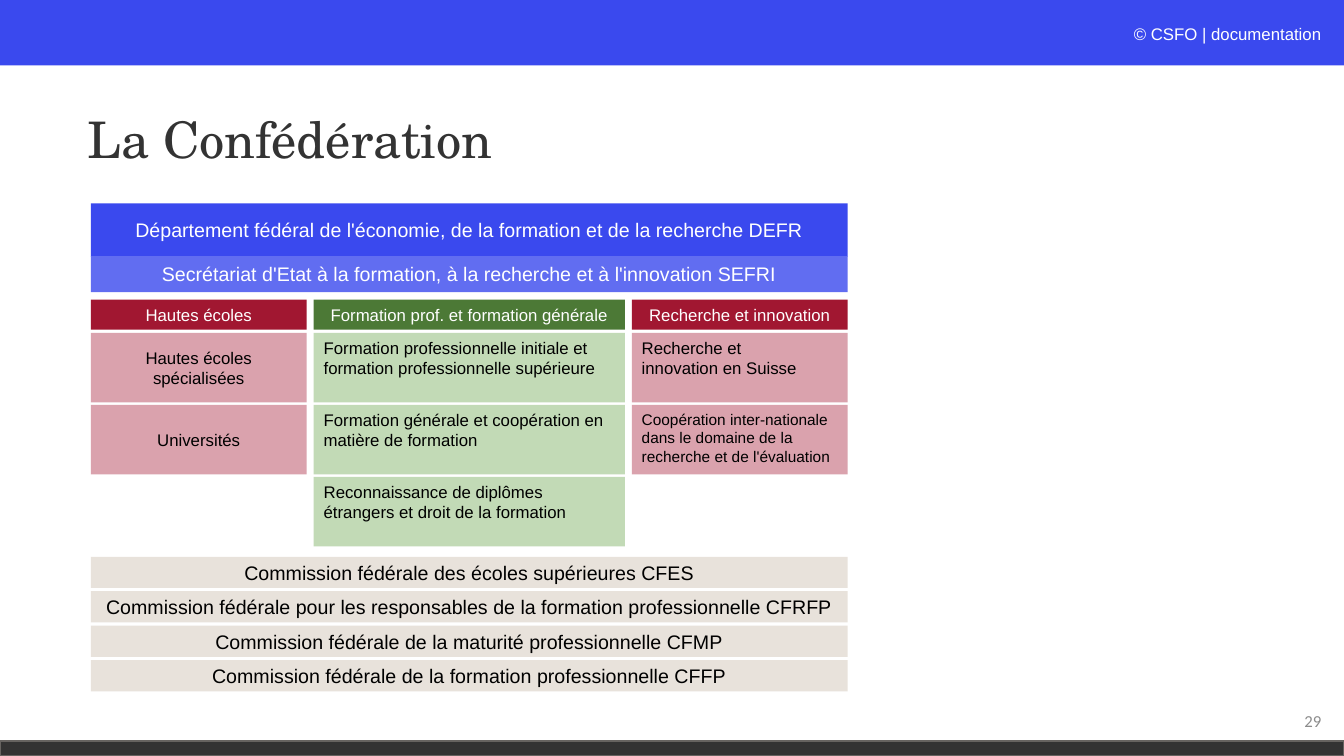
import pptx
import pptx.util
import pptx.dml.color
import pptx.enum.shapes
import pptx.enum.text
from dataclasses import dataclass

Pt = pptx.util.Pt
RGB = pptx.dml.color.RGBColor.from_string
ALIGN = pptx.enum.text.PP_ALIGN
ANCHOR = pptx.enum.text.MSO_ANCHOR
RECT = pptx.enum.shapes.MSO_SHAPE.RECTANGLE


@dataclass(frozen=True)
class Theme:
    blue: str = "3A49EE"
    light_blue: str = "616DF1"
    red: str = "A11731"
    pink: str = "DAA2AD"
    green: str = "4C7936"
    light_green: str = "C2DAB6"
    beige: str = "E8E2DB"
    dark: str = "333333"
    edge: str = "666360"
    grey: str = "8C8C8C"
    white: str = "FFFFFF"
    black: str = "000000"
    body: str = "Arial"
    heading: str = "TeX Gyre Schola"
    number: str = "Calibri"
    title_size: float = 36
    band_size: float = 14
    cell_size: float = 12
    small_size: float = 11


T = Theme()


def write(sp, text, size=T.cell_size, color=T.black, font=T.body,
          align=ALIGN.CENTER, anchor=ANCHOR.MIDDLE, spacing=None):
    """Fill a shape with text, one paragraph per line."""
    tf = sp.text_frame
    tf.word_wrap = True
    tf.vertical_anchor = anchor
    tf.text = text
    for p in tf.paragraphs:
        p.alignment = align
        p.line_spacing = spacing
        p.font.size = Pt(size)
        p.font.name = font
        p.font.color.rgb = RGB(color)


def add_box(s, x, y, w, h, fill, line=None):
    sp = s.shapes.add_shape(RECT, Pt(x), Pt(y), Pt(w), Pt(h))
    sp.shadow.inherit = False
    sp.fill.solid()
    sp.fill.fore_color.rgb = RGB(fill)
    if line:
        sp.line.color.rgb = RGB(line)
        sp.line.width = Pt(1)
    else:
        sp.line.fill.background()
    return sp


def add_label(s, x, y, w, h, text, **fmt):
    write(s.shapes.add_textbox(Pt(x), Pt(y), Pt(w), Pt(h)), text, **fmt)


def add_frame(s, w, h):
    """Top band with copyright, bottom strip and page number."""
    add_box(s, 0, 0, w, 46.8, T.blue)
    add_box(s, 0, h - 10.8, w, 10.8, T.dark, line=T.edge)
    add_label(s, w - 339, 13.7, 330, 21.6, "© CSFO | documentation",
              color=T.white, align=ALIGN.RIGHT, anchor=ANCHOR.TOP)
    add_label(s, w - 225, h - 39.6, 216, 28.8, "29",
              color=T.grey, font=T.number, align=ALIGN.RIGHT)


def add_departments(s, x, y, w):
    write(add_box(s, x, y, w, 38, T.blue),
          "Département fédéral de l'économie, de la formation et de la recherche DEFR",
          size=T.band_size, color=T.white)
    write(add_box(s, x, y + 37.6, w, 25.7, T.light_blue),
          "Secrétariat d'Etat à la formation, à la recherche et à l'innovation SEFRI",
          size=T.band_size, color=T.white)


def add_column(s, x, y, w, header, tasks, head_fill, fill, **fmt):
    """Header over a stack of tasks, each a (text, size) pair."""
    write(add_box(s, x, y, w, 21.6, head_fill), header, color=T.white)
    for i, (text, size) in enumerate(tasks):
        sp = add_box(s, x, y + 23.7 + i * 51.45, w, 49.7, fill)
        write(sp, text, size=size, **fmt)


def add_domains(s, x, y, w):
    side, gap = 154.2, 5
    top_left = dict(align=ALIGN.LEFT, anchor=ANCHOR.TOP)
    add_column(s, x, y, side, "Hautes écoles",
               [("Hautes écoles\nspécialisées", T.cell_size),
                ("Universités", T.cell_size)], T.red, T.pink)
    add_column(s, x + side + gap, y, w - 2 * (side + gap),
               "Formation prof. et formation générale",
               [("Formation professionnelle initiale et\n"
                 "formation professionnelle supérieure", T.cell_size),
                ("Formation générale et coopération en matière de formation",
                 T.cell_size),
                ("Reconnaissance de diplômes étrangers et droit de la formation",
                 T.cell_size)],
               T.green, T.light_green, **top_left)
    add_column(s, x + w - side, y, side, "Recherche et innovation",
               [("Recherche et\ninnovation en Suisse", T.cell_size),
                ("Coopération inter-nationale dans le domaine de la recherche "
                 "et de l'évaluation", T.small_size)],
               T.red, T.pink, **top_left)


def add_commissions(s, x, y, w):
    names = ["des écoles supérieures CFES",
             "pour les responsables de la formation professionnelle CFRFP",
             "de la maturité professionnelle CFMP",
             "de la formation professionnelle CFFP"]
    for i, name in enumerate(names):
        sp = add_box(s, x, y + i * 24.6, w, 22.3, T.beige)
        write(sp, f"Commission fédérale {name}", size=T.band_size)


def main():
    prs = pptx.Presentation()
    prs.slide_width, prs.slide_height = Pt(960), Pt(540)
    s = prs.slides.add_slide(prs.slide_layouts[6])
    add_frame(s, 960, 540)
    add_label(s, 55.5, 49.7, 635, 104.4, "La Confédération",
              size=T.title_size, color=T.dark, font=T.heading,
              align=ALIGN.LEFT, spacing=0.9)
    left, width = 64.9, 540.6
    add_departments(s, left, 145.3, width)
    add_domains(s, left, 214, width)
    add_commissions(s, left, 397.7, width)
    prs.save("out.pptx")


if __name__ == "__main__":
    main()
